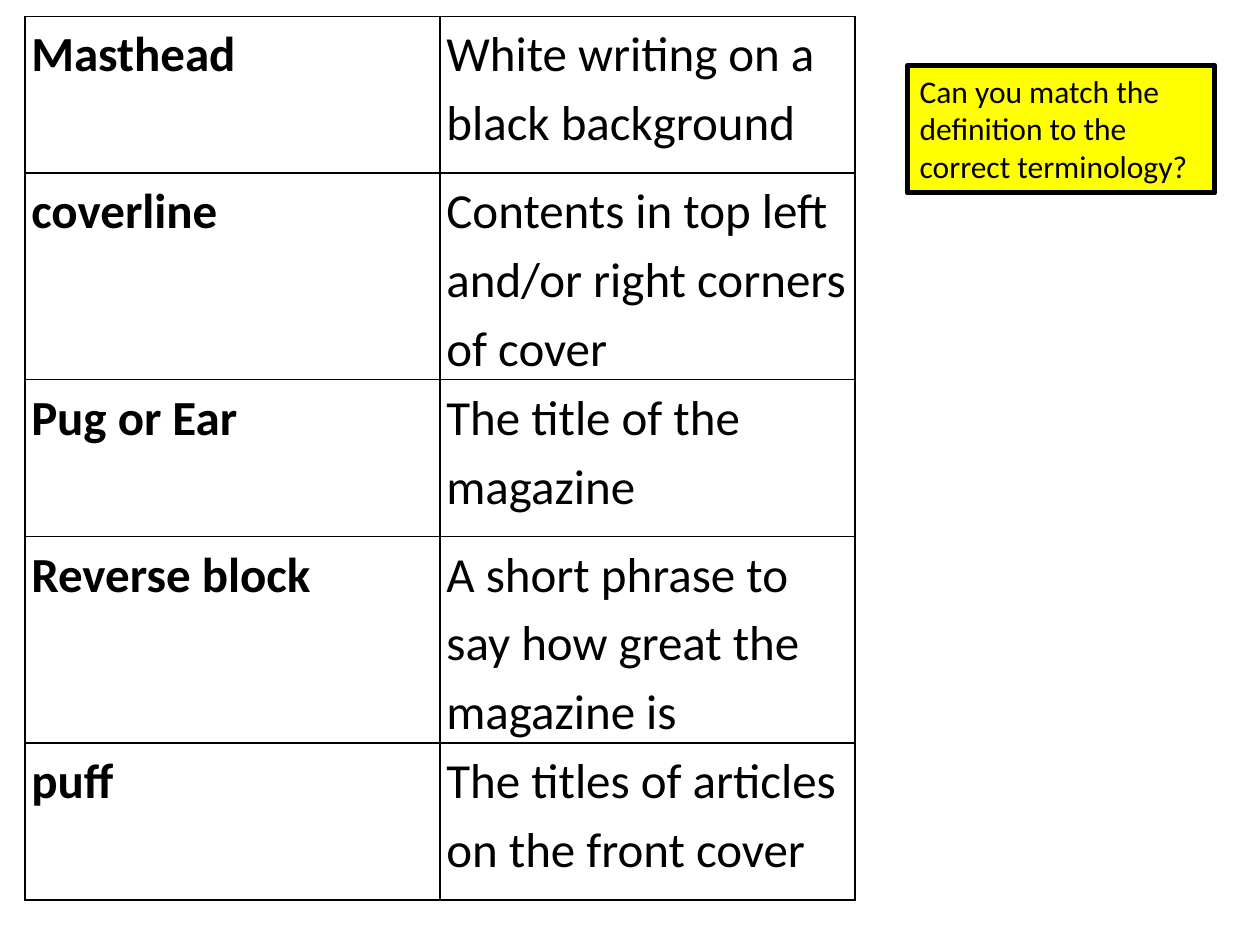
from dataclasses import dataclass

from lxml import etree
from pptx import Presentation
from pptx.dml.color import RGBColor
from pptx.enum.shapes import MSO_SHAPE
from pptx.enum.text import MSO_ANCHOR, MSO_AUTO_SIZE, PP_ALIGN
from pptx.oxml.ns import qn
from pptx.util import Cm, Pt

RECTANGLE = MSO_SHAPE.RECTANGLE
LEFT = PP_ALIGN.LEFT
TOP = MSO_ANCHOR.TOP
FIT_SHAPE = MSO_AUTO_SIZE.SHAPE_TO_FIT_TEXT

FONT = "Calibri"
COLOURS = {"ink": "000000", "paper": "FFFFFF", "prompt": "FFFF00"}
COLUMN_WIDTH = Cm(8.37)
CELL_MARGIN = Cm(0.13)
BORDER_SIDES = ("a:lnL", "a:lnR", "a:lnT", "a:lnB")


@dataclass
class Entry:
    term: str
    definition: str
    height: float  # row height in centimetres


SHORT, TALL = 3.16, 3.94
ENTRIES = [
    Entry("Masthead", "White writing on a black background", SHORT),
    Entry("coverline", "Contents in top left and/or right corners of cover", TALL),
    Entry("Pug or Ear", "The title of the magazine", SHORT),
    Entry("Reverse block", "A short phrase to say how great the magazine is", TALL),
    Entry("puff", "The titles of articles on the front cover", SHORT),
]


def colour(name: str) -> RGBColor:
    return RGBColor.from_string(COLOURS[name])


def add_text(text_frame, text: str, size: float, bold: bool = False):
    paragraph = text_frame.paragraphs[0]
    paragraph.alignment = LEFT
    run = paragraph.add_run()
    run.text = text
    run.font.name = FONT
    run.font.size = Pt(size)
    run.font.bold = bold
    run.font.color.rgb = colour("ink")
    return paragraph


def add_borders(cell, width: float) -> None:
    properties = cell._tc.get_or_add_tcPr()
    # Border lines come before the fill in the cell properties
    for position, side in enumerate(BORDER_SIDES):
        line = etree.Element(qn(side), w=str(Pt(width)))
        fill = etree.SubElement(line, qn("a:solidFill"))
        etree.SubElement(fill, qn("a:srgbClr"), val=COLOURS["ink"])
        properties.insert(position, line)


def fill_cell(cell, text: str, bold: bool) -> None:
    cell.margin_left = cell.margin_right = CELL_MARGIN
    cell.margin_top = cell.margin_bottom = 0
    cell.vertical_anchor = TOP
    cell.fill.solid()
    cell.fill.fore_color.rgb = colour("paper")
    add_text(cell.text_frame, text, 28, bold).line_spacing = 1.15
    add_borders(cell, 1)


def add_glossary(slide, entries: list[Entry]) -> None:
    height = Cm(sum(entry.height for entry in entries))
    table = slide.shapes.add_table(
        len(entries), 2, Cm(0.5), Cm(0.33), 2 * COLUMN_WIDTH, height
    ).table
    table.first_row = table.horz_banding = False
    for column in table.columns:
        column.width = COLUMN_WIDTH
    for row, entry in zip(table.rows, entries):
        row.height = Cm(entry.height)
        fill_cell(row.cells[0], entry.term, bold=True)
        fill_cell(row.cells[1], entry.definition, bold=False)


def add_prompt(slide, text: str) -> None:
    shape = slide.shapes.add_shape(RECTANGLE, Cm(18.29), Cm(1.32), Cm(6.2), Cm(2.57))
    shape.shadow.inherit = False
    shape.fill.solid()
    shape.fill.fore_color.rgb = colour("prompt")
    shape.line.color.rgb = colour("ink")
    shape.line.width = Pt(3)
    text_frame = shape.text_frame
    text_frame.word_wrap = True
    text_frame.auto_size = FIT_SHAPE
    text_frame.vertical_anchor = TOP
    add_text(text_frame, text, 18)


def main() -> None:
    presentation = Presentation()
    presentation.slide_width, presentation.slide_height = Cm(25.4), Cm(19.05)
    slide = presentation.slides.add_slide(presentation.slide_layouts[6])

    # Terms and their shuffled definitions
    add_glossary(slide, ENTRIES)

    # Question for the class
    add_prompt(slide, "Can you match the definition to the correct terminology?")

    presentation.save("out.pptx")


if __name__ == "__main__":
    main()
